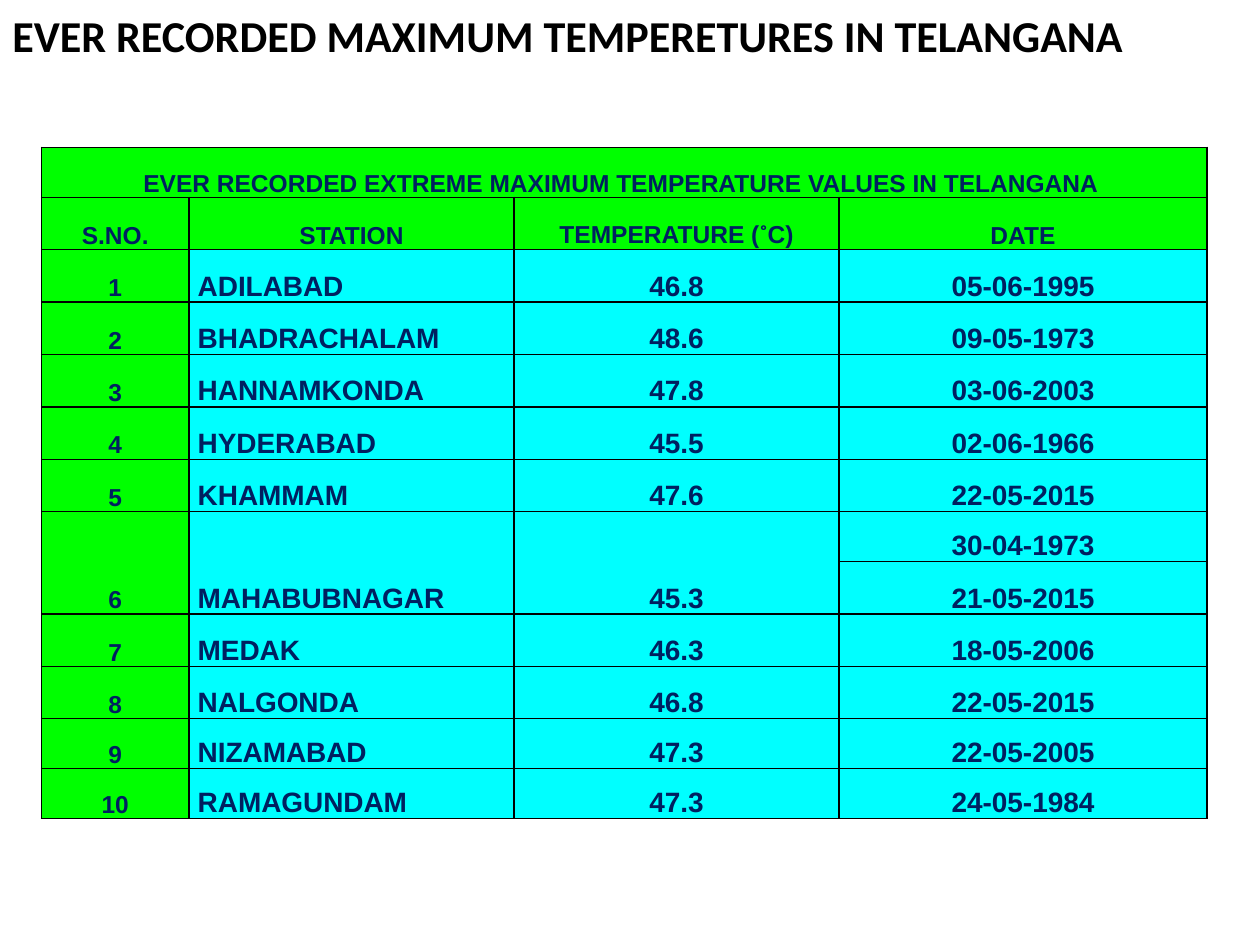
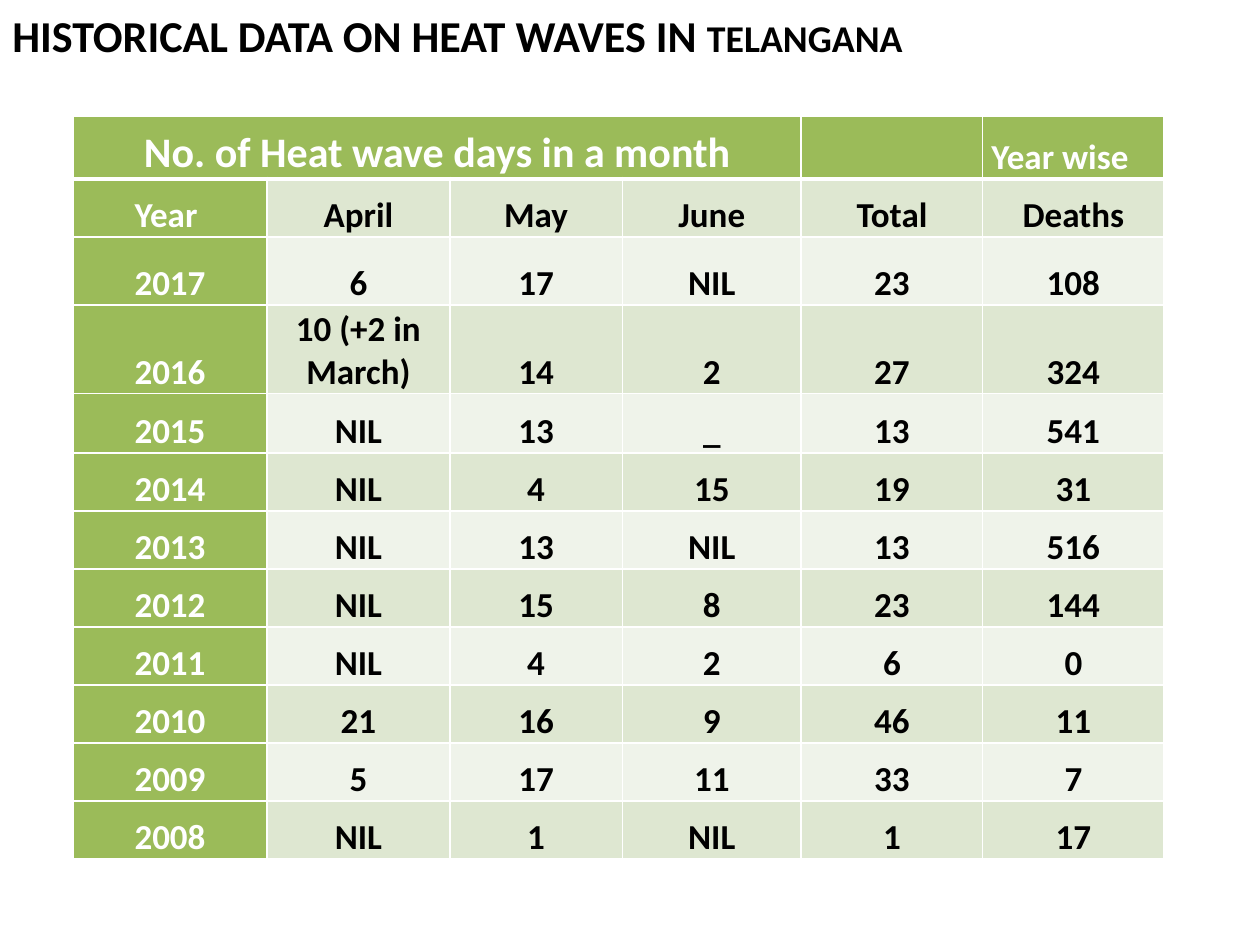
from dataclasses import dataclass, replace

from lxml.etree import SubElement
from pptx import Presentation
from pptx.dml.color import RGBColor
from pptx.enum.text import MSO_ANCHOR as ANCHOR, PP_ALIGN as ALIGN
from pptx.oxml.ns import qn
from pptx.util import Inches, Pt

BLACK = RGBColor(0x00, 0x00, 0x00)
WHITE = RGBColor(0xFF, 0xFF, 0xFF)
NAVY = RGBColor(0x00, 0x20, 0x60)
LIME = RGBColor(0x00, 0xFF, 0x00)
CYAN = RGBColor(0x00, 0xFF, 0xFF)
OLIVE = RGBColor(0x9B, 0xBB, 0x59)
BAND_DARK = RGBColor(0xDE, 0xE7, 0xD1)
BAND_LIGHT = RGBColor(0xEF, 0xF3, 0xEA)


@dataclass(frozen=True)
class Style:
    """Look of a run of bold text."""
    font: str
    size: float
    color: RGBColor


TITLE = Style("Calibri", 25.2, BLACK)
LABEL = Style("Arial", 14, NAVY)
RECORD = replace(LABEL, size=16)
DAYS = Style("Calibri", 20, BLACK)
DAYS_LABEL = replace(DAYS, color=WHITE)
DAYS_HEADING = replace(DAYS_LABEL, size=24)

RECORD_HEADING = "EVER RECORDED EXTREME MAXIMUM TEMPERATURE VALUES IN TELANGANA "
RECORDS = [
    ("S.NO.", "STATION", "TEMPERATURE (˚C)", "DATE"),
    ("1", "ADILABAD", "46.8", "05-06-1995"),
    ("2", "BHADRACHALAM", "48.6", "09-05-1973"),
    ("3", "HANNAMKONDA", "47.8", "03-06-2003"),
    ("4", "HYDERABAD", "45.5", "02-06-1966"),
    ("5", "KHAMMAM", "47.6", "22-05-2015"),
    ("6", "MAHABUBNAGAR", "45.3", "30-04-1973"),
    ("", "", "", "21-05-2015"),
    ("7", "MEDAK", "46.3", "18-05-2006"),
    ("8", "NALGONDA", "46.8", "22-05-2015"),
    ("9", "NIZAMABAD", "47.3", "22-05-2005"),
    ("10", "RAMAGUNDAM", "47.3", "24-05-1984"),
]
HEAT_WAVES = [
    ("No. of Heat wave days in a month", "", "", "", "", "Year wise"),
    ("Year ", "April", "May", "June", "Total", "Deaths"),
    ("2017", "6", "17", "NIL", "23", "108"),
    ("2016", "10 (+2 in March)", "14", "2", "27", "324"),
    ("2015", "NIL", "13", "_", "13", "541"),
    ("2014", "NIL", "4", "15", "19", "31"),
    ("2013", "NIL", "13", "NIL", "13", "516"),
    ("2012", "NIL", "15", "8", "23", "144"),
    ("2011", "NIL", "4", "2", "6", "0"),
    ("2010", "21", "16", "9", "46", "11"),
    ("2009", "5", "17", "11", "33", "7"),
    ("2008", "NIL", "1", "NIL", "1", "17"),
]


def add_run(p, text, style):
    """Append one styled run to a paragraph."""
    r = p.add_run()
    r.text = text
    r.font.name, r.font.size, r.font.bold = style.font, Pt(style.size), True
    r.font.color.rgb = style.color


def add_title(slide, *runs):
    """Add the slide title from (text, style) pairs."""
    tf = slide.shapes.add_textbox(0, 0, Inches(10), Inches(0.99)).text_frame
    tf.word_wrap = True
    tf.margin_top = Inches(0.07)
    tf.vertical_anchor = ANCHOR.TOP
    for text, style in runs:
        add_run(tf.paragraphs[0], text, style)


def set_borders(cell, color, bottom=1):
    """Draw the four edges of a cell, 1 pt wide except perhaps the bottom."""
    tc_pr = cell._tc.get_or_add_tcPr()
    for edge, width in (("L", 1), ("R", 1), ("T", 1), ("B", bottom)):
        ln = SubElement(tc_pr, qn(f"a:ln{edge}"), w=str(Pt(width)))
        fill = SubElement(ln, qn("a:solidFill"))
        SubElement(fill, qn("a:srgbClr"), val=str(color))


def format_cell(cell, fill, border, bottom=1):
    """Give a cell its edges, fill, insets and bottom anchor."""
    set_borders(cell, border, bottom)
    cell.fill.solid()
    cell.fill.fore_color.rgb = fill
    cell.margin_left = cell.margin_right = Inches(0.07)
    cell.margin_top = cell.margin_bottom = 0
    cell.vertical_anchor = ANCHOR.BOTTOM


def write_cell(cell, text, style, align=ALIGN.CENTER):
    """Write a cell's text, with any degree ring set in Calibri."""
    p = cell.text_frame.paragraphs[0]
    p.alignment = align
    before, ring, after = text.partition("˚")
    for part, look in ((before, style), (ring, replace(style, font="Calibri")), (after, style)):
        if part:
            add_run(p, part, look)


def add_table(slide, left, top, height, widths, weights):
    """Add a plain table whose rows share the height by weight."""
    table = slide.shapes.add_table(
        len(weights), len(widths), Inches(left), Inches(top),
        Inches(sum(widths)), Inches(height)).table
    table.first_row = table.horz_banding = False
    for col, width in zip(table.columns, widths):
        col.width = Inches(width)
    for row, weight in zip(table.rows, weights):
        row.height = Inches(height * weight / sum(weights))
    return table


def add_record_table(slide):
    """Add the table of record temperatures by station."""
    weights = [0.4] + [0.42] * 6 + [0.4] + [0.42] * 3 + [0.4] * 2
    table = add_table(slide, 0.33, 1.17, 5.33, [1.17, 2.58, 2.58, 2.92], weights)
    for i, row in enumerate([(RECORD_HEADING, "", "", "")] + RECORDS):
        for j, text in enumerate(row):
            is_label = i < 2 or j == 0
            format_cell(table.cell(i, j), LIME if is_label else CYAN, BLACK)
            align = ALIGN.LEFT if j == 1 and not is_label else ALIGN.CENTER
            write_cell(table.cell(i, j), text, LABEL if is_label else RECORD, align)
    table.cell(0, 0).merge(table.cell(0, 3))
    for j in range(3):
        table.cell(7, j).merge(table.cell(8, j))


def add_heat_wave_table(slide):
    """Add the table of heat wave days and deaths by year."""
    weights = [0.5, 0.46, 0.54, 0.7, 0.47] + [0.46] * 7
    table = add_table(slide, 0.58, 0.92, 5.9, [1.54, 1.45, 1.37, 1.42, 1.44, 1.44], weights)
    for i, row in enumerate(HEAT_WAVES):
        band = BAND_DARK if i % 2 else BAND_LIGHT
        for j, text in enumerate(row):
            is_label = i == 0 or j == 0
            style = DAYS_LABEL if is_label else DAYS
            if i == j == 0:
                style = DAYS_HEADING
            format_cell(table.cell(i, j), OLIVE if is_label else band, WHITE, 1 if i else 3)
            align = ALIGN.LEFT if (i, j) == (0, 5) else ALIGN.CENTER
            write_cell(table.cell(i, j), text, style, align)
    table.cell(0, 0).merge(table.cell(0, 3))


def main():
    """Build the two slides and save them."""
    prs = Presentation()
    prs.slide_width, prs.slide_height = Inches(10), Inches(7.5)
    blank = prs.slide_layouts[6]

    slide = prs.slides.add_slide(blank)
    add_title(slide, ("EVER RECORDED MAXIMUM TEMPERETURES IN TELANGANA", TITLE))
    add_record_table(slide)

    slide = prs.slides.add_slide(blank)
    add_title(slide, ("HISTORICAL DATA ON HEAT WAVES IN ", TITLE),
              ("TELANGANA", replace(TITLE, size=21.6)))
    add_heat_wave_table(slide)

    prs.save("out.pptx")


if __name__ == "__main__":
    main()
